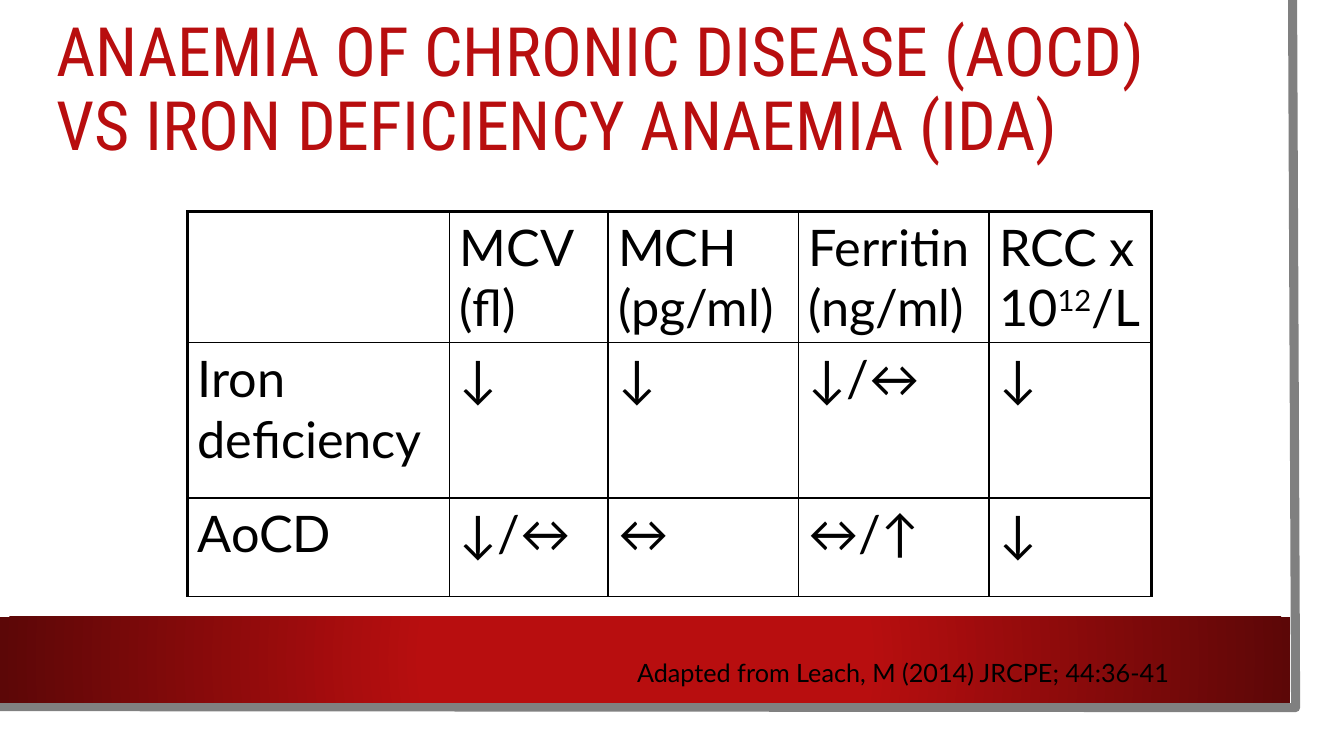
"""Build the slide comparing anaemia of chronic disease with iron deficiency."""
from dataclasses import dataclass

from lxml.etree import SubElement
from pptx import Presentation
from pptx.dml.color import RGBColor
from pptx.enum.shapes import MSO_SHAPE
from pptx.enum.text import MSO_ANCHOR, MSO_AUTO_SIZE, PP_ALIGN
from pptx.oxml import parse_xml
from pptx.oxml.ns import nsdecls, qn
from pptx.shapes.autoshape import Shape
from pptx.slide import Slide
from pptx.table import _Cell
from pptx.text.text import TextFrame
from pptx.util import Inches, Pt


@dataclass(frozen=True)
class Theme:
    red: str = "B80E0F"
    dark_red: str = "5C0707"
    black: str = "000000"
    white: str = "FFFFFF"
    grey: str = "808080"
    heading_font: str = "Roboto Condensed"
    body_font: str = "Lato"
    title_size: float = 48.6
    table_size: float = 36
    source_size: float = 18
    outer_line: float = 2.25
    inner_line: float = 1
    edge_line: float = 6.5


@dataclass(frozen=True)
class Panel:
    left: float
    top: float
    width: float
    height: float


@dataclass(frozen=True)
class BloodRow:
    height: float
    values: tuple[str, ...]


THEME = Theme()
PAGE = Panel(0, 0, 13.1, 7.27)
BAND = Panel(0, 6.12, 12.8, 0.85)
TITLE = Panel(0.46, 0.28, 11.21, 1.25)
SOURCE = Panel(6.22, 6.47, 5.55, 0.4)
COLUMN_WIDTHS = (2.6, 1.57, 1.89, 1.89, 1.61)
BLOOD_ROWS = (
    BloodRow(1.3, ("", "MCV (fl)", "MCH (pg/ml)", "Ferritin (ng/ml)", "RCC x 10^12^/L")),
    BloodRow(1.54, ("Iron deficiency", "↓", "↓", "↓/↔", "↓")),
    BloodRow(0.98, ("AoCD", "↓/↔", "↔", "↔/↑", "↓")),
)


def box(panel: Panel) -> tuple[Inches, ...]:
    """Return the four lengths of a panel."""
    return tuple(map(Inches, (panel.left, panel.top, panel.width, panel.height)))


def write_text(frame: TextFrame, text: str, *, size: float, font: str = THEME.body_font,
               color: str = THEME.black, spacing: float = 1.0,
               anchor: MSO_ANCHOR = MSO_ANCHOR.TOP) -> None:
    """Write one paragraph, raising whatever stands between carets."""
    frame.word_wrap = True
    frame.vertical_anchor = anchor
    paragraph = frame.paragraphs[0]
    paragraph.alignment = PP_ALIGN.LEFT
    paragraph.line_spacing = spacing
    for index, part in enumerate(text.split("^")):
        run = paragraph.add_run()
        run.text = part
        run.font.size = Pt(size)
        run.font.name = font
        run.font.color.rgb = RGBColor.from_string(color)
        if index % 2:
            run._r.get_or_add_rPr().set("baseline", "30000")


def add_panel(slide: Slide, panel: Panel) -> Shape:
    """Add a plain white rectangle."""
    rectangle = slide.shapes.add_shape(MSO_SHAPE.RECTANGLE, *box(panel))
    rectangle.shadow.inherit = False
    rectangle.line.fill.background()
    rectangle.fill.solid()
    rectangle.fill.fore_color.rgb = RGBColor.from_string(THEME.white)
    return rectangle


def add_band(slide: Slide) -> None:
    """Add the red band that darkens away from its centre."""
    properties = add_panel(slide, BAND)._element.spPr
    gradient = parse_xml(
        f'<a:gradFill {nsdecls("a")} rotWithShape="1"><a:gsLst>'
        f'<a:gs pos="34000"><a:srgbClr val="{THEME.red}"/></a:gs>'
        f'<a:gs pos="100000"><a:srgbClr val="{THEME.dark_red}"/></a:gs></a:gsLst>'
        '<a:path path="circle"><a:fillToRect l="50000" t="50000" r="50000" b="50000"/>'
        '</a:path></a:gradFill>')
    properties.replace(properties.find(qn("a:solidFill")), gradient)


def add_page_edge(slide: Slide) -> None:
    """Draw the grey edge down the right side and along the bottom."""
    builder = slide.shapes.build_freeform(Inches(12.82), Inches(0))
    corners = [(Inches(12.85), Inches(7.02)), (Inches(-0.03), Inches(7.01))]
    builder.add_line_segments(corners, close=False)
    edge = builder.convert_to_shape()
    edge.shadow.inherit = False
    edge.fill.background()
    edge.line.width = Pt(THEME.edge_line)
    edge.line.color.rgb = RGBColor.from_string(THEME.grey)


def set_borders(cell: _Cell, **widths: float) -> None:
    """Give the cell black borders, one width for each side."""
    properties = cell._tc.get_or_add_tcPr()
    for side, width in widths.items():
        line = SubElement(properties, qn(f"a:ln{side}"), w=str(Pt(width)))
        fill = SubElement(line, qn("a:solidFill"))
        SubElement(fill, qn("a:srgbClr"), val=THEME.black)


def add_blood_table(slide: Slide) -> None:
    """Add the table of blood results."""
    area = Panel(1.86, 2.1, sum(COLUMN_WIDTHS), sum(row.height for row in BLOOD_ROWS))
    table = slide.shapes.add_table(len(BLOOD_ROWS), len(COLUMN_WIDTHS), *box(area)).table
    table.first_row = table.horz_banding = False
    for column, width in zip(table.columns, COLUMN_WIDTHS):
        column.width = Inches(width)
    outer, inner = THEME.outer_line, THEME.inner_line
    last = len(COLUMN_WIDTHS) - 1
    for r, blood_row in enumerate(BLOOD_ROWS):
        table.rows[r].height = Inches(blood_row.height)
        for c, value in enumerate(blood_row.values):
            cell = table.cell(r, c)
            set_borders(cell, L=inner if c else outer, R=outer if c == last else inner,
                        T=inner if r else outer, B=inner)
            cell.fill.background()
            if value:
                write_text(cell.text_frame, value, size=THEME.table_size)


def add_title(slide: Slide) -> None:
    """Fill the title placeholder."""
    title = slide.shapes.title
    title.left, title.top, title.width, title.height = box(TITLE)
    title.text_frame.auto_size = MSO_AUTO_SIZE.NONE
    write_text(title.text_frame,
               "ANAEMIA OF CHRONIC DISEASE (AOCD) VS IRON DEFICIENCY ANAEMIA (IDA)",
               size=THEME.title_size, font=THEME.heading_font, color=THEME.red,
               spacing=0.9, anchor=MSO_ANCHOR.MIDDLE)


def add_source(slide: Slide) -> None:
    """Add the citation over the red band."""
    source = slide.shapes.add_textbox(*box(SOURCE)).text_frame
    source.auto_size = MSO_AUTO_SIZE.SHAPE_TO_FIT_TEXT
    write_text(source, "Adapted from Leach, M (2014) JRCPE; 44:36-41", size=THEME.source_size)


def main() -> None:
    """Build and save the presentation."""
    presentation = Presentation()
    presentation.slide_width = Inches(13.33)
    presentation.slide_height = Inches(7.5)
    slide = presentation.slides.add_slide(presentation.slide_layouts.get_by_name("Title Only"))
    add_panel(slide, PAGE)
    add_page_edge(slide)
    add_band(slide)
    add_blood_table(slide)
    title = slide.shapes.title._element
    slide.shapes._spTree.append(title)
    add_title(slide)
    add_source(slide)
    presentation.save("out.pptx")


if __name__ == "__main__":
    main()
